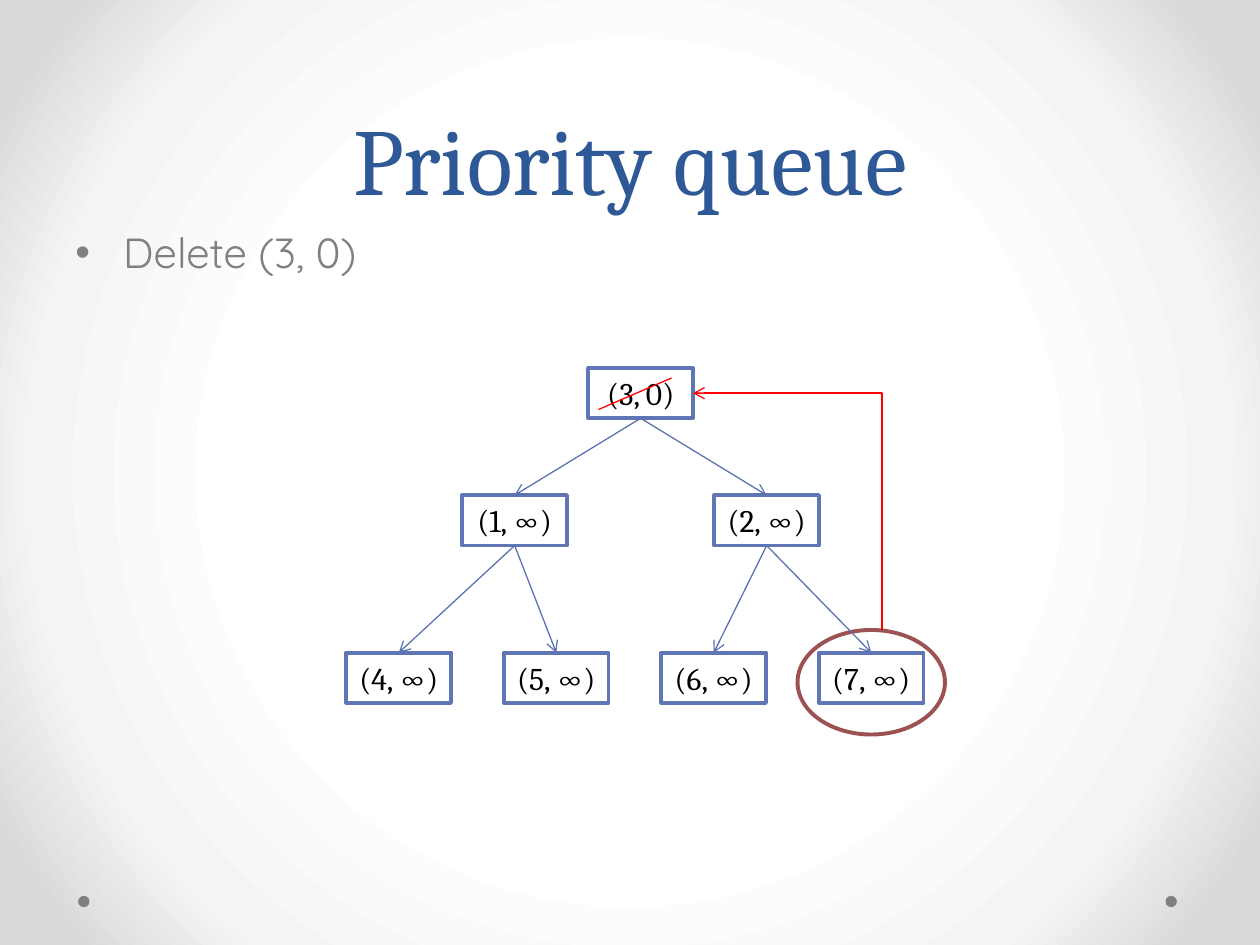
import pptx
import pptx.util
import pptx.oxml
import pptx.oxml.ns
import pptx.dml.color
import pptx.enum.shapes
import pptx.enum.text
from lxml import etree

Inches = pptx.util.Inches
Pt = pptx.util.Pt
SHAPE = pptx.enum.shapes.MSO_SHAPE
LINK = pptx.enum.shapes.MSO_CONNECTOR
ALIGN = pptx.enum.text.PP_ALIGN
ANCHOR = pptx.enum.text.MSO_ANCHOR
qn = pptx.oxml.ns.qn

COLORS = {
    "title": "2F5897", "grey": "808080", "white": "FFFFFF", "black": "000000",
    "node": "6076B4", "edge": "5C72B2", "ring": "9C5252", "red": "FF0000",
    "pale": "F4F4F4", "dim": "DADADA",
}


def color(name):
    """Return the named colour."""
    return pptx.dml.color.RGBColor.from_string(COLORS[name])


def write(shape, text, font="Cambria", size=18, ink="black", align=ALIGN.CENTER,
          anchor=ANCHOR.MIDDLE, inset=0.1, lead=None, bullet=None, indent=0):
    """Put one formatted paragraph into a shape."""
    frame = shape.text_frame
    frame.word_wrap = True
    frame.vertical_anchor = anchor
    frame.margin_left = frame.margin_right = Inches(inset)
    para = frame.paragraphs[0]
    para.text = text
    para.alignment = align
    if lead:
        para.line_spacing = Pt(lead)
    if bullet:
        props = para._p.get_or_add_pPr()
        props.set("marL", str(Inches(indent)))
        props.set("indent", str(-Inches(indent)))
        etree.SubElement(props, qn("a:buFont")).set("typeface", "Arial")
        etree.SubElement(props, qn("a:buChar")).set("char", bullet)
    style = para.runs[0].font
    style.name = font
    style.size = Pt(size)
    style.color.rgb = color(ink)


def draw(slide, kind, box, fill, line=None):
    """Add a flat preset shape."""
    shape = slide.shapes.add_shape(kind, *map(Inches, box))
    shape.shadow.inherit = False
    shape.fill.solid()
    shape.fill.fore_color.rgb = color(fill)
    if line:
        shape.line.color.rgb = color(line)
        shape.line.width = Pt(2.25)
    else:
        shape.line.fill.background()
    return shape


def link(slide, start, end, ink, kind=LINK.STRAIGHT, tip=None):
    """Add a thin connector with an optional arrow tip."""
    wire = slide.shapes.add_connector(kind, *map(Inches, start + end))
    wire.line.color.rgb = color(ink)
    wire.line.width = Pt(0.75)
    if tip:
        mark = etree.SubElement(wire.line._get_or_add_ln(), qn(tip))
        mark.set("type", "arrow")
    etree.SubElement(wire._element.spPr, qn("a:effectLst"))
    return wire


def backdrop(slide):
    """Fill the background with a round gradient and add the corner dots."""
    stops = "".join(
        f'<a:gs pos="{pos}000"><a:srgbClr val="{COLORS[name]}"/></a:gs>'
        for pos, name in ((50, "white"), (76, "pale"), (92, "dim")))
    grad = pptx.oxml.parse_xml(
        f'<a:gradFill {pptx.oxml.ns.nsdecls("a")} rotWithShape="1">'
        f'<a:gsLst>{stops}</a:gsLst><a:path path="circle">'
        '<a:fillToRect l="50000" t="50000" r="50000" b="50000"/>'
        '</a:path></a:gradFill>')
    slide.background.fill.solid()
    solid = slide.background._cSld.find(".//" + qn("a:solidFill"))
    solid.getparent().replace(solid, grad)
    for left in (0.62, 9.25):
        draw(slide, SHAPE.OVAL, (left, 7.11, 0.09, 0.09), "grey")


def heading(slide, box):
    """Write the slide title."""
    area = slide.shapes.add_textbox(*map(Inches, box))
    write(area, "Priority queue", size=54, ink="title", lead=58,
          anchor=ANCHOR.BOTTOM)


def body(slide, box):
    """Write the bullet text."""
    area = slide.shapes.add_textbox(*map(Inches, box))
    write(area, "Delete (3, 0)", font="Quicksand", size=24, ink="grey",
          align=ALIGN.LEFT, anchor=ANCHOR.TOP, bullet="•", indent=0.38)


def tree(slide, box):
    """Draw the heap and the move of its last leaf to the root."""
    left, top = box[:2]
    wide, high = 0.83, 0.4
    draw(slide, SHAPE.OVAL, (left + 3.58, top + 2.08, 1.17, 0.83), "white", "ring")
    levels = (
        (1.92, 0, 0, ["(3, 0)"]),
        (0.92, 2, 1.01, ["(1, ∞)", "(2, ∞)"]),
        (0, 1.25, 2.26, ["(4, ∞)", "(5, ∞)", "(6, ∞)", "(7, ∞)"]),
    )
    nodes = []
    for first, step, drop, labels in levels:
        for i, label in enumerate(labels):
            spot = (left + first + i * step, top + drop, wide, high)
            node = draw(slide, SHAPE.RECTANGLE, spot, "white", "node")
            write(node, label, inset=0)
            nodes.append(node)
    for i, node in enumerate(nodes[1:]):
        edge = link(slide, (0, 0), (1, 1), "edge", tip="a:tailEnd")
        edge.begin_connect(nodes[i // 2], 2)
        edge.end_connect(node, 0)
    link(slide, (left + 2, top + 0.33), (left + 2.58, top + 0.08), "red")
    move = link(slide, (left + 2.75, top + high / 2), (left + 4.25, top + 2.08),
                "red", kind=LINK.ELBOW, tip="a:headEnd")
    move._element.spPr.find(qn("a:prstGeom")).set("prst", "bentConnector2")


def main():
    """Build and save the slide."""
    deck = pptx.Presentation()
    deck.slide_width = Inches(10)
    deck.slide_height = Inches(7.5)
    slide = deck.slides.add_slide(deck.slide_layouts[6])
    backdrop(slide)
    heading(slide, (0.5, 0, 9, 1.75))
    body(slide, (0.5, 1.75, 9, 4.95))
    tree(slide, (2.75, 2.92, 4.58, 2.66))
    deck.save("out.pptx")


if __name__ == "__main__":
    main()
